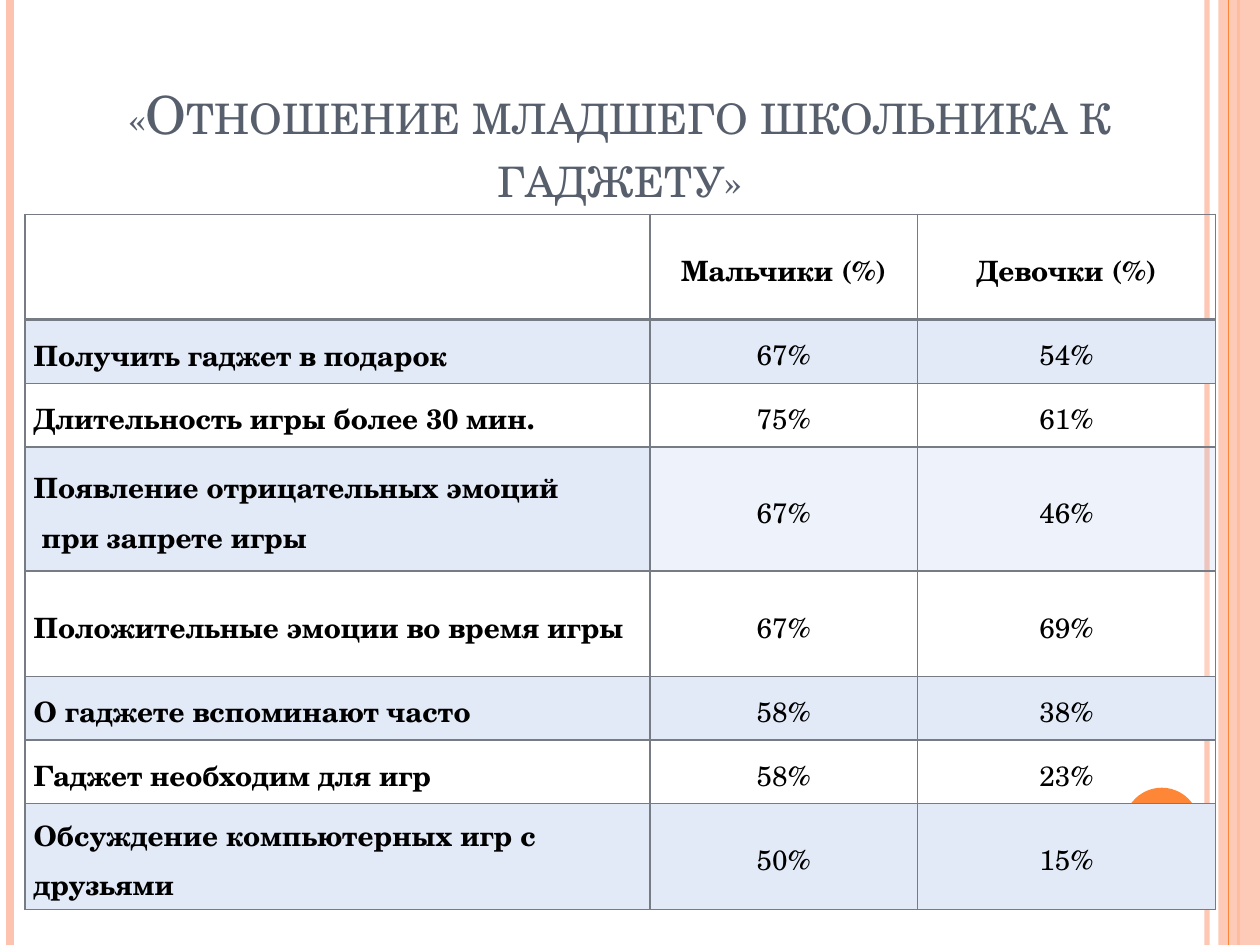
from dataclasses import dataclass

from lxml import etree
from pptx import Presentation
from pptx.dml.color import RGBColor
from pptx.enum.shapes import MSO_CONNECTOR, MSO_SHAPE
from pptx.enum.text import MSO_ANCHOR, PP_ALIGN
from pptx.oxml.ns import qn
from pptx.util import Cm, Pt

LINE = MSO_CONNECTOR.STRAIGHT
RECT, OVAL = MSO_SHAPE.RECTANGLE, MSO_SHAPE.OVAL
LEFT, CENTER = PP_ALIGN.LEFT, PP_ALIGN.CENTER
MIDDLE, BOTTOM = MSO_ANCHOR.MIDDLE, MSO_ANCHOR.BOTTOM


@dataclass(frozen=True)
class Theme:
    """Colours, font and type sizes of the slide."""
    font: str = "TeX Gyre Schola"
    title_size: int = 30
    body_size: int = 16
    title: str = "575F6D"
    text: str = "000000"
    orange: str = "FE8637"
    peach: str = "FEC3AE"
    border: str = "777C84"
    band: str = "E3EAF7"
    tint: str = "ACC1E8"
    white: str = "FFFFFF"


def paint(fill, color, alpha=100):
    """Give a fill a solid colour with an opacity in percent."""
    fill.solid()
    fill.fore_color.rgb = RGBColor.from_string(color)
    if alpha < 100:
        clr = next(fill._xPr.iter(qn("a:srgbClr")))
        etree.SubElement(clr, qn("a:alpha"), val=str(alpha * 1000))


class Deck:
    """Draws styled elements on the current slide."""

    def __init__(self, prs, theme):
        """Start a blank slide."""
        self.t = theme
        self.s = prs.slides.add_slide(prs.slide_layouts[6])

    def vline(self, x, width, color, alpha=100):
        """Draw a line down the full slide height."""
        ln = self.s.shapes.add_connector(LINE, Cm(x), Cm(0), Cm(x), Cm(19.05))
        ln.line.width = Pt(width)
        paint(ln.line.fill, color, alpha)
        etree.SubElement(ln._element.spPr, qn("a:effectLst"))

    def shape(self, kind, box, color, alpha=100):
        """Draw a filled shape without outline."""
        sp = self.s.shapes.add_shape(kind, *map(Cm, box))
        sp.shadow.inherit = False
        sp.line.fill.background()
        paint(sp.fill, color, alpha)

    def run(self, p, text, color, align, **fmt):
        """Fill a paragraph with one formatted run."""
        p.alignment = align
        r = p.add_run()
        r.text = text
        for name, value in {"name": self.t.font, **fmt}.items():
            setattr(r.font, name, value)
        r.font.color.rgb = RGBColor.from_string(color)
        return r

    def title(self, text, box):
        """Place the small-caps title."""
        tf = self.s.shapes.add_textbox(*map(Cm, box)).text_frame
        fmt = {"word_wrap": True, "vertical_anchor": BOTTOM, "margin_bottom": Cm(1.3)}
        for name, value in fmt.items():
            setattr(tf, name, value)
        r = self.run(tf.paragraphs[0], text, self.t.title, CENTER, size=Pt(self.t.title_size))
        r.font._element.set("cap", "small")

    def edges(self, cell, widths):
        """Set the left, right, top and bottom borders of a cell."""
        tc = cell._tc.get_or_add_tcPr()
        for i, (side, width) in enumerate(zip("LRTB", widths)):
            ln = etree.Element(qn(f"a:ln{side}"), w=str(Pt(width)))
            fill = etree.SubElement(ln, qn("a:solidFill"))
            etree.SubElement(fill, qn("a:srgbClr"), val=self.t.border)
            tc.insert(i, ln)

    def cell(self, cell, text, fill, align, bold):
        """Fill and format one table cell."""
        fmt = {"vertical_anchor": MIDDLE, "margin_left": Cm(0.18), "margin_right": Cm(0.18),
               "margin_top": 0, "margin_bottom": 0}
        for name, value in fmt.items():
            setattr(cell, name, value)
        if fill:
            paint(cell.fill, *fill)
        else:
            cell.fill.background()
        tf = cell.text_frame
        for i, line in enumerate(text.split("\n") if text else []):
            p = tf.add_paragraph() if i else tf.paragraphs[0]
            p.line_spacing = 1.15
            self.run(p, line, self.t.text, align, size=Pt(self.t.body_size), bold=bold)

    def table(self, box, cols, heights, rows, fills):
        """Build the table with a header row and a label column."""
        tbl = self.s.shapes.add_table(len(rows), len(cols), *map(Cm, box)).table
        tbl.first_row = tbl.horz_banding = False
        for col, width in zip(tbl.columns, cols):
            col.width = Cm(width)
        for i, (height, row) in enumerate(zip(heights, rows)):
            tbl.rows[i].height = Cm(height)
            for j, text in enumerate(row):
                cell = tbl.cell(i, j)
                align = CENTER if i == 0 or j else LEFT
                self.cell(cell, text, fills[i][min(j, 1)], align, i == 0 or j == 0)
                self.edges(cell, (1, 1, 2 if i == 1 else 1, 2 if i == 0 else 1))


def main():
    """Build and save the slide."""
    prs = Presentation()
    prs.slide_width, prs.slide_height = Cm(25.4), Cm(19.05)
    t = Theme()
    d = Deck(prs, t)

    d.vline(24.33, 3, t.peach, 93)
    d.vline(0.2, 4.5, t.peach)
    d.vline(24.97, 1.5, t.orange)
    d.shape(RECT, (24.56, 0, 0.84, 19.05), t.peach, 87)
    d.vline(24.77, 0.75, t.orange)
    d.shape(OVAL, (22.66, 15.88, 1.52, 1.52), t.orange)
    d.title("«Отношение младшего школьника к гаджету»", (0.5, 0.33, 24, 5.16))

    rows = [
        ("", "Мальчики (%)", "Девочки (%)"),
        ("Получить гаджет в подарок", "67%", "54%"),
        ("Длительность игры более 30 мин.", "75%", "61%"),
        ("Появление отрицательных эмоций\n при запрете игры", "67%", "46%"),
        ("Положительные эмоции во время игры", "67%", "69%"),
        ("О гаджете вспоминают часто", "58%", "38%"),
        ("Гаджет необходим для игр", "58%", "23%"),
        ("Обсуждение компьютерных игр с друзьями", "50%", "15%"),
    ]
    clear, band = (None, None), ((t.band,), (t.band,))
    fills = [clear, band, clear, ((t.band,), (t.tint, 20)),
             ((t.white, 20), (t.white, 20)), band, clear, band]
    low, mid, high = 1.28, 2.13, 2.5
    heights = [mid, low, low, high, mid, low, low, mid]
    d.table((0.5, 4.32, 24, 14), (12.6, 5.4, 6), heights, rows, fills)
    prs.save("out.pptx")


if __name__ == "__main__":
    main()
